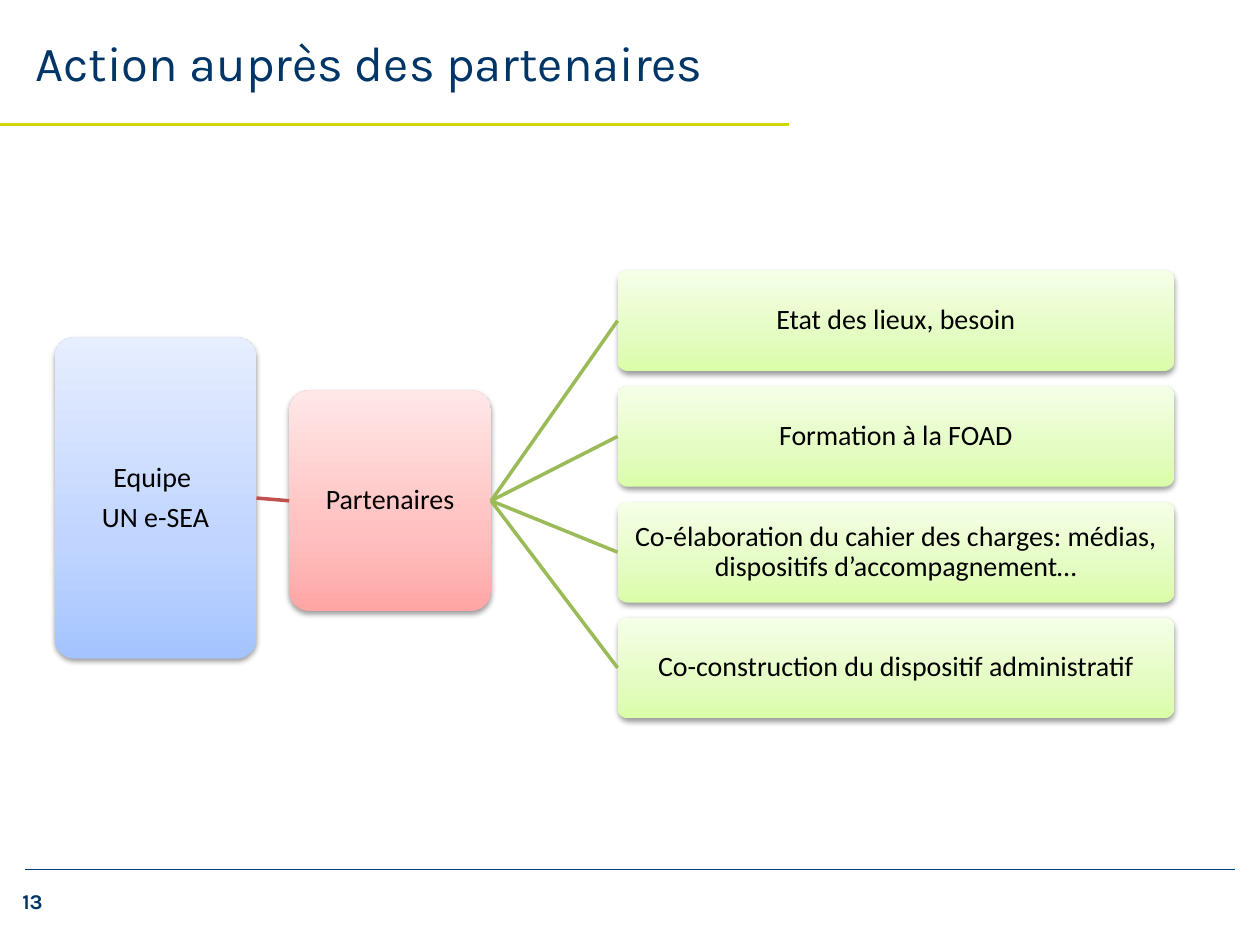
import copy

import pptx
import pptx.dml.color
import pptx.enum.shapes
import pptx.enum.text
import pptx.oxml
import pptx.oxml.ns
import pptx.util

Cm, Pt = pptx.util.Cm, pptx.util.Pt
RGBColor = pptx.dml.color.RGBColor
ALIGN = pptx.enum.text.PP_ALIGN
MIDDLE = pptx.enum.text.MSO_ANCHOR.MIDDLE

NAVY = RGBColor(0x00, 0x36, 0x67)
FOOTER_BLUE = RGBColor(0x00, 0x40, 0x80)
LIME = RGBColor(0xD0, 0xD7, 0x00)
BLACK = RGBColor(0x00, 0x00, 0x00)
RED = RGBColor(0xC0, 0x50, 0x4D)
GREEN = RGBColor(0x9B, 0xBB, 0x59)
# Gradients run from the bottom of a card to its top
BLUE_FADE = [RGBColor(0xA4, 0xC4, 0xFF), RGBColor(0xBF, 0xD4, 0xFF), RGBColor(0xE6, 0xEE, 0xFF)]
RED_FADE = [RGBColor(0xFF, 0xA6, 0xA5), RGBColor(0xFF, 0xC0, 0xBF), RGBColor(0xFF, 0xE7, 0xE7)]
GREEN_FADE = [RGBColor(0xDA, 0xFD, 0xA7), RGBColor(0xE4, 0xFC, 0xC2), RGBColor(0xF5, 0xFF, 0xE7)]
FADE_POSITIONS = [0, 0.35, 1]

TITLE_FONT = {"name": "Karla", "size": Pt(28), "bold": False}
NUMBER_FONT = {"name": "Karla", "size": Pt(12), "bold": True}
CARD_FONT = {"name": "Calibri", "size": Pt(16), "bold": False}
CARD_PARA = {"alignment": ALIGN.CENTER, "line_spacing": 0.9, "space_after": Pt(5.6)}
CARD_FRAME = {"word_wrap": True, "vertical_anchor": MIDDLE,
              **{f"margin_{side}": Cm(0.09) for side in ("left", "right", "top", "bottom")}}

SHADOW = (
    f'<a:effectLst {pptx.oxml.ns.nsdecls("a")}>'
    '<a:outerShdw blurRad="40000" dist="20000" dir="5400000" rotWithShape="0">'
    '<a:srgbClr val="000000"><a:alpha val="38000"/></a:srgbClr>'
    '</a:outerShdw></a:effectLst>'
)
NO_EFFECT = f'<a:effectLst {pptx.oxml.ns.nsdecls("a")}/>'

ACTIONS = [
    "Etat des lieux, besoin",
    "Formation à la FOAD",
    "Co-élaboration du cahier des charges: médias, dispositifs d’accompagnement…",
    "Co-construction du dispositif administratif",
]


def apply(target, values):
    for name, value in values.items():
        setattr(target, name, value)


def write(para, text, font, color):
    span = para.add_run()
    span.text = text
    apply(span.font, font)
    span.font.color.rgb = color


def add_line(page, start, end, color, width):
    line = page.shapes.add_connector(
        pptx.enum.shapes.MSO_CONNECTOR.STRAIGHT, *start, *end)
    line.line.color.rgb = color
    line.line.width = Pt(width)
    line._element.spPr.append(pptx.oxml.parse_xml(NO_EFFECT))


def fade(fill, colors):
    fill.gradient()
    fill.gradient_angle = 90
    stops = fill._xPr.find(pptx.oxml.ns.qn("a:gradFill")).gsLst
    stops.append(copy.deepcopy(stops[-1]))
    for stop, color, position in zip(fill.gradient_stops, colors, FADE_POSITIONS):
        stop.color.rgb = color
        stop.position = position


def add_card(page, left, top, width, height, lines, colors):
    card = page.shapes.add_shape(
        pptx.enum.shapes.MSO_SHAPE.ROUNDED_RECTANGLE, left, top, width, height)
    card.adjustments[0] = 0.1
    fade(card.fill, colors)
    card.line.fill.background()
    card._element.spPr.append(pptx.oxml.parse_xml(SHADOW))
    frame = card.text_frame
    apply(frame, CARD_FRAME)
    for index, text in enumerate(lines):
        para = frame.add_paragraph() if index else frame.paragraphs[0]
        apply(para, CARD_PARA)
        write(para, text, CARD_FONT, BLACK)
    return card


def link(page, source, target, color):
    start = source.left + source.width, source.top + source.height // 2
    end = target.left, target.top + target.height // 2
    add_line(page, start, end, color, 2)


def add_header(page, left, top, width, height):
    title = page.shapes.title
    apply(title, {"left": left, "top": top, "width": width, "height": height})
    frame = title.text_frame
    apply(frame, {"vertical_anchor": MIDDLE, "word_wrap": True,
                  "auto_size": pptx.enum.text.MSO_AUTO_SIZE.NONE})
    para = frame.paragraphs[0]
    para.alignment = ALIGN.LEFT
    write(para, "Action auprès des partenaires", TITLE_FONT, NAVY)
    rule = top + height
    add_line(page, (0, rule), (Cm(15.9), rule), LIME, 2)


def add_footer(page, left, top, width):
    add_line(page, (left, top), (left + width, top), FOOTER_BLUE, 0.5)
    box = page.shapes.add_textbox(left - Cm(0.3), top + Cm(0.25), Cm(2.4), Cm(0.76))
    box.text_frame.word_wrap = True
    write(box.text_frame.paragraphs[0], "13", NUMBER_FONT, NAVY)


def add_diagram(page, left, top, width, height):
    # Team, then partners
    card_width = Cm(4.07)
    team = add_card(page, left, top + Cm(1.35), card_width, Cm(6.48),
                    ["Equipe ", "UN e-SEA"], BLUE_FADE)
    partners = add_card(page, left + Cm(4.73), top + Cm(2.42), card_width, Cm(4.45),
                        ["Partenaires"], RED_FADE)
    link(page, team, partners, RED)

    # Actions, evenly stacked on the right
    action_left, action_height = left + Cm(11.35), Cm(2.03)
    pitch = (height - action_height) // (len(ACTIONS) - 1)
    for index, text in enumerate(ACTIONS):
        action = add_card(page, action_left, top + index * pitch,
                          left + width - action_left, action_height, [text], GREEN_FADE)
        link(page, partners, action, GREEN)


def main():
    deck = pptx.Presentation()
    deck.slide_width, deck.slide_height = Cm(25.4), Cm(19.05)
    page = deck.slides.add_slide(deck.slide_layouts.get_by_name("Title Only"))
    add_footer(page, Cm(0.5), Cm(17.53), Cm(24.4))
    add_header(page, Cm(0.46), Cm(0), Cm(22.35), Cm(2.51))
    add_diagram(page, Cm(1.1), Cm(5.45), Cm(22.57), Cm(9.03))
    deck.save("out.pptx")


if __name__ == "__main__":
    main()
